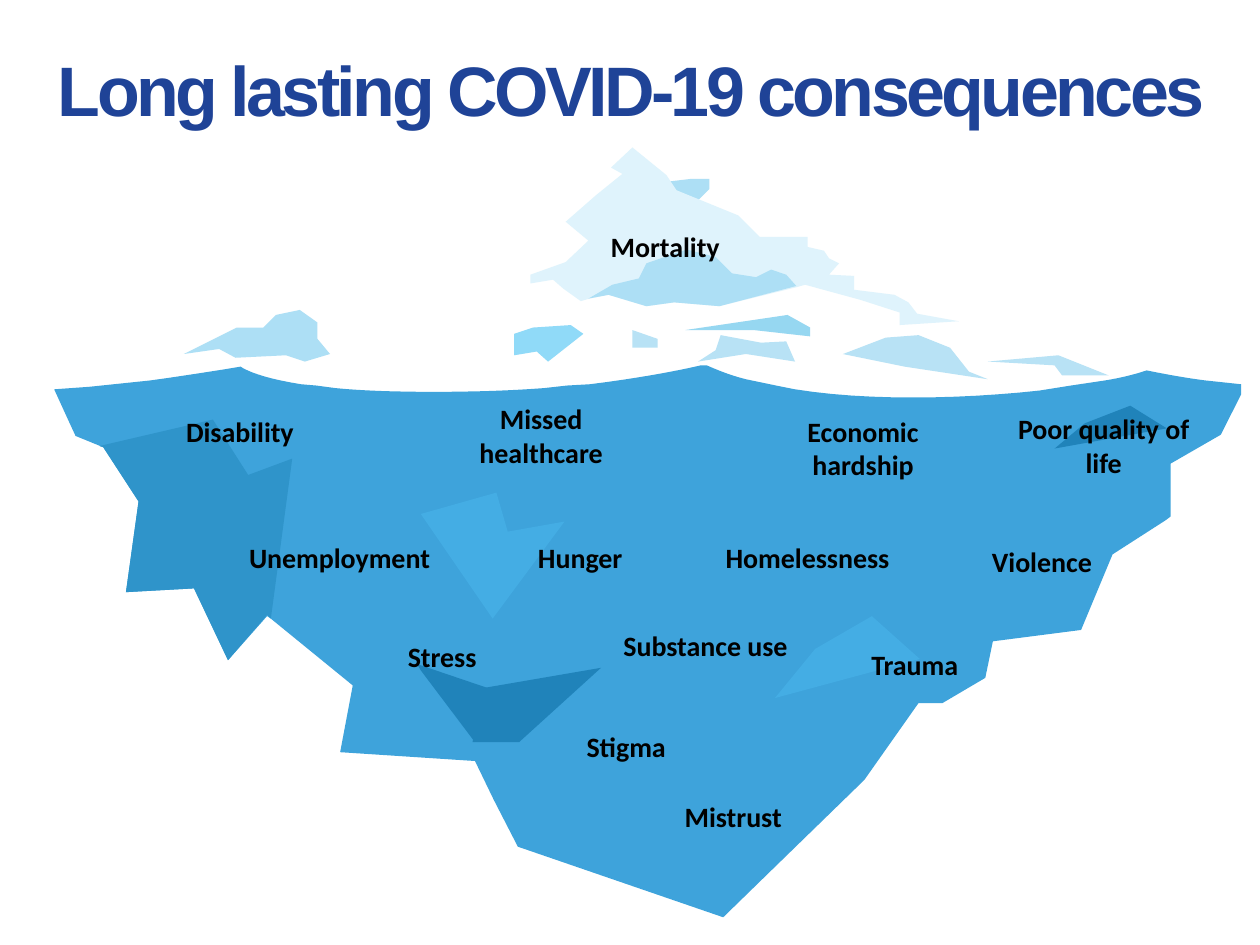
from pptx import Presentation
from pptx.dml.color import RGBColor as Rgb
from pptx.enum.text import MSO_ANCHOR as Anchor, MSO_AUTO_SIZE as AutoSize, PP_ALIGN as Align
from pptx.util import Cm, Pt

CM_PER_UNIT = 2.54  # the drawing grid has 10 by 7.5 units
CURVE_STEPS = 12

COLORS = {
    "title": "1F4397", "text": "000000",
    "snow": "DFF3FC", "shade": "ADDFF5", "floe": "B8E2F5",
    "bright_floe": "90DAF8", "flat_floe": "96D7F1",
    "water": "3EA3DB", "side": "2F94CA", "light": "44ADE4", "dark": "2083BA",
}

# Outlines: a pair is a corner, six numbers are a Bezier curve (two controls, end)
ICE_ABOVE = [
    ("shade", [(5.23, 1.45), (5.48, 1.42), (5.63, 1.42), (5.63, 1.5), (5.5, 1.63)]),
    ("shade", [(1.46, 2.81), (1.88, 2.6), (2.09, 2.6), (2.19, 2.5), (2.38, 2.46),
               (2.52, 2.56), (2.52, 2.69), (2.62, 2.81), (2.42, 2.87), (2.27, 2.82),
               (1.87, 2.84), (1.74, 2.77)]),
    ("floe", [(5.02, 2.76), (5.02, 2.62), (5.22, 2.69), (5.22, 2.76)]),
    ("floe", [(5.54, 2.87), (5.68, 2.78), (5.72, 2.66), (6.04, 2.72), (6.24, 2.71),
              (6.31, 2.87), (5.92, 2.81)]),
    ("bright_floe", [(4.08, 2.82), (4.08, 2.65), (4.23, 2.6), (4.53, 2.58),
                     (4.63, 2.65), (4.35, 2.87), (4.26, 2.79)]),
    ("flat_floe", [(5.44, 2.62), (6.25, 2.5), (6.43, 2.6), (6.43, 2.67), (5.98, 2.62)]),
    ("floe", [(6.69, 2.81), (7.03, 2.68), (7.29, 2.66), (7.54, 2.76), (7.69, 2.95),
              (7.84, 3.01), (7.18, 2.91)]),
    ("floe", [(7.84, 2.87), (8.4, 2.82), (8.8, 2.98), (8.43, 2.98), (8.37, 2.9)]),
    ("snow", [(5.02, 1.17), (5.29, 1.39), (5.37, 1.51), (5.86, 1.71), (6.03, 1.88),
              (6.41, 1.88), (6.41, 1.96), (6.54, 1.99), (6.58, 2.05), (6.66, 2.09),
              (6.58, 2.18), (6.78, 2.19), (6.78, 2.3), (7.1, 2.34), (7.21, 2.4),
              (7.28, 2.49), (7.61, 2.55), (7.14, 2.58), (7.14, 2.48), (6.83, 2.38),
              (6.39, 2.26), (6.32, 2.28), (5.71, 2.43), (5.35, 2.4), (5.13, 2.43),
              (4.83, 2.34), (4.68, 2.37), (4.61, 2.39), (4.47, 2.29), (4.39, 2.22),
              (4.21, 2.25), (4.21, 2.18), (4.49, 2.08), (4.67, 1.91), (4.49, 1.76),
              (4.73, 1.55), (4.94, 1.38), (4.85, 1.33)]),
    ("shade", [(6.12, 2.14), (6, 2.2), (5.81, 2.17), (5.68, 2.04), (5.45, 1.98),
               (5.13, 2.09), (5.07, 2.21), (4.86, 2.26), (4.67, 2.37), (4.83, 2.34),
               (5.13, 2.43), (5.35, 2.4), (5.71, 2.43), (6.32, 2.27), (6.24, 2.18)]),
]

ICE_BELOW = [
    ("water", [(5.61, 2.9), (5.7, 2.94, 5.8, 2.98, 5.92, 3.01), (6.16, 3.06), (6.31, 3.09),
               (6.87, 3.18, 7.6, 3.17, 8.25, 3.1), (8.5, 3.06), (8.7, 3.03),
               (8.85, 3.01, 8.98, 2.98, 9.1, 2.94), (9.25, 2.97, 9.41, 3, 9.57, 3.02),
               (9.85, 3.05), (9.85, 3.13), (9.75, 3.33), (9.69, 3.45), (9.29, 3.68),
               (9.29, 4.1), (9.25, 4.13), (8.83, 4.4), (8.58, 5), (7.88, 5.09),
               (7.82, 5.38), (7.48, 5.58), (7.29, 5.58), (6.86, 6.19), (6.12, 6.91),
               (5.74, 7.28), (4.11, 6.72), (3.92, 6.35), (3.77, 6.04), (2.7, 5.97),
               (2.8, 5.44), (2.15, 4.91), (2.12, 4.89), (1.81, 5.24), (1.54, 4.67),
               (1, 4.7), (1.1, 3.98), (0.82, 3.55), (0.6, 3.46), (0.54, 3.33),
               (0.43, 3.09), (0.71, 3.07), (1.19, 3.02),
               (1.62, 2.96, 1.91, 2.91, 1.91, 2.91), (1.91, 2.91, 2.01, 2.99, 2.39, 3.05),
               (2.51, 3.06), (2.66, 3.08), (2.86, 3.1, 3.12, 3.11, 3.44, 3.11),
               (3.77, 3.11, 4.06, 3.1, 4.32, 3.08), (4.5, 3.06), (4.68, 3.05),
               (5.24, 2.98, 5.56, 2.9, 5.56, 2.9)]),
    ("side", [(1.97, 3.77), (1.69, 3.33), (0.79, 3.54), (0.82, 3.55), (1.1, 3.98),
              (1, 4.7), (1.54, 4.67), (1.81, 5.24), (2.12, 4.88), (2.15, 4.91),
              (2.32, 3.64)]),
    ("light", [(3.34, 4.08), (3.94, 3.91), (4.03, 4.22), (4.48, 4.14), (3.91, 4.91)]),
    ("dark", [(8.61, 3.36), (8.37, 3.56), (9.26, 3.4), (8.97, 3.22)]),
    ("dark", [(3.77, 5.89), (3.34, 5.32), (3.31, 5.27), (3.87, 5.46)]),
    ("dark", [(3.75, 5.89), (3.84, 5.46), (4.77, 5.3), (4.12, 5.89)]),
    ("light", [(6.47, 5.15), (6.15, 5.54), (7.3, 5.23), (6.92, 4.89)]),
]

# Wording, left, top, width, number of lines
LABELS = [
    ("Hunger", 3.93, 4.24, 1.35, 1),
    ("Disability", 1.23, 3.24, 1.35, 1),
    ("Unemployment", 1.72, 4.24, 1.95, 1),
    ("Economic hardship", 6.08, 3.24, 1.54, 2),
    ("Missed healthcare", 3.44, 3.14, 1.71, 2),
    ("Homelessness", 5.51, 4.24, 1.8, 1),
    ("Stress", 2.66, 5.03, 1.7, 1),
    ("Poor quality of life", 7.91, 3.22, 1.7, 2),
    ("Violence", 7.42, 4.27, 1.7, 1),
    ("Substance use", 4.75, 4.94, 1.7, 1),
    ("Stigma", 4.12, 5.74, 1.7, 1),
    ("Trauma", 6.45, 5.09, 1.62, 1),
    ("Mistrust", 4.97, 6.3, 1.7, 1),
    ("Mortality", 4.51, 1.77, 1.54, 1),
]
LINE_HEIGHT = 0.27
LABEL_PADDING = 0.1


def grid(value):
    return Cm(value * CM_PER_UNIT)


def flatten(outline):
    """Turn corners and Bezier curves into one list of points."""
    points = []
    for step in outline:
        if len(step) == 2:
            points.append(step)
            continue
        start, first, second, end = points[-1], step[:2], step[2:4], step[4:]
        for index in range(1, CURVE_STEPS + 1):
            t = index / CURVE_STEPS
            u = 1 - t
            points.append(tuple(
                u**3 * a + 3 * u * u * t * b + 3 * u * t * t * c + t**3 * d
                for a, b, c, d in zip(start, first, second, end)))
    return points


class IcebergSlide:
    def __init__(self, deck):
        self.page = deck.slides.add_slide(deck.slide_layouts[5])

    def style(self, para, font_name, size, color):
        para.alignment = Align.CENTER
        para.font.name = font_name
        para.font.size = Pt(size)
        para.font.bold = True
        para.font.color.rgb = Rgb.from_string(COLORS[color])

    def title(self, text, left, top, width, height):
        box = self.page.shapes.title
        box.left, box.top, box.width, box.height = map(grid, (left, top, width, height))
        frame = box.text_frame
        frame.text = text
        frame.word_wrap = True
        frame.auto_size = AutoSize.NONE
        frame.vertical_anchor = Anchor.BOTTOM
        frame.margin_left = frame.margin_right = grid(0.07)
        frame.margin_top = frame.margin_bottom = grid(0.04)
        para = frame.paragraphs[0]
        para.line_spacing = 0.8
        para.space_before = Pt(0)
        self.style(para, "Arial", 40, "title")
        properties = para._p.get_or_add_pPr()
        properties.set("marL", str(grid(0.1)))
        properties.set("indent", "0")
        para.runs[0].font._element.set("spc", "-200")  # tighter letters, in 1/100 pt

    def ice(self, pieces):
        group = self.page.shapes.add_group_shape()
        for color, outline in pieces:
            points = [(grid(x), grid(y)) for x, y in flatten(outline)]
            builder = group.shapes.build_freeform(*points[0])
            builder.add_line_segments(points[1:], close=True)
            shape = builder.convert_to_shape()
            shape.shadow.inherit = False
            shape.fill.solid()
            shape.fill.fore_color.rgb = Rgb.from_string(COLORS[color])
            shape.line.fill.background()

    def label(self, text, left, top, width, lines):
        height = LABEL_PADDING + lines * LINE_HEIGHT
        box = self.page.shapes.add_textbox(*map(grid, (left, top, width, height)))
        frame = box.text_frame
        frame.text = text
        frame.word_wrap = True
        frame.auto_size = AutoSize.SHAPE_TO_FIT_TEXT
        self.style(frame.paragraphs[0], "Calibri", 16, "text")


def main():
    deck = Presentation()
    deck.slide_width, deck.slide_height = Cm(25.4), Cm(19.05)
    slide = IcebergSlide(deck)

    # Heading
    slide.title("Long lasting COVID-19 consequences", 0.26, 0.44, 9.4, 0.63)

    # Iceberg
    slide.ice(ICE_ABOVE)
    slide.ice(ICE_BELOW)

    # Consequences
    for label in LABELS:
        slide.label(*label)

    deck.save("out.pptx")


if __name__ == "__main__":
    main()
